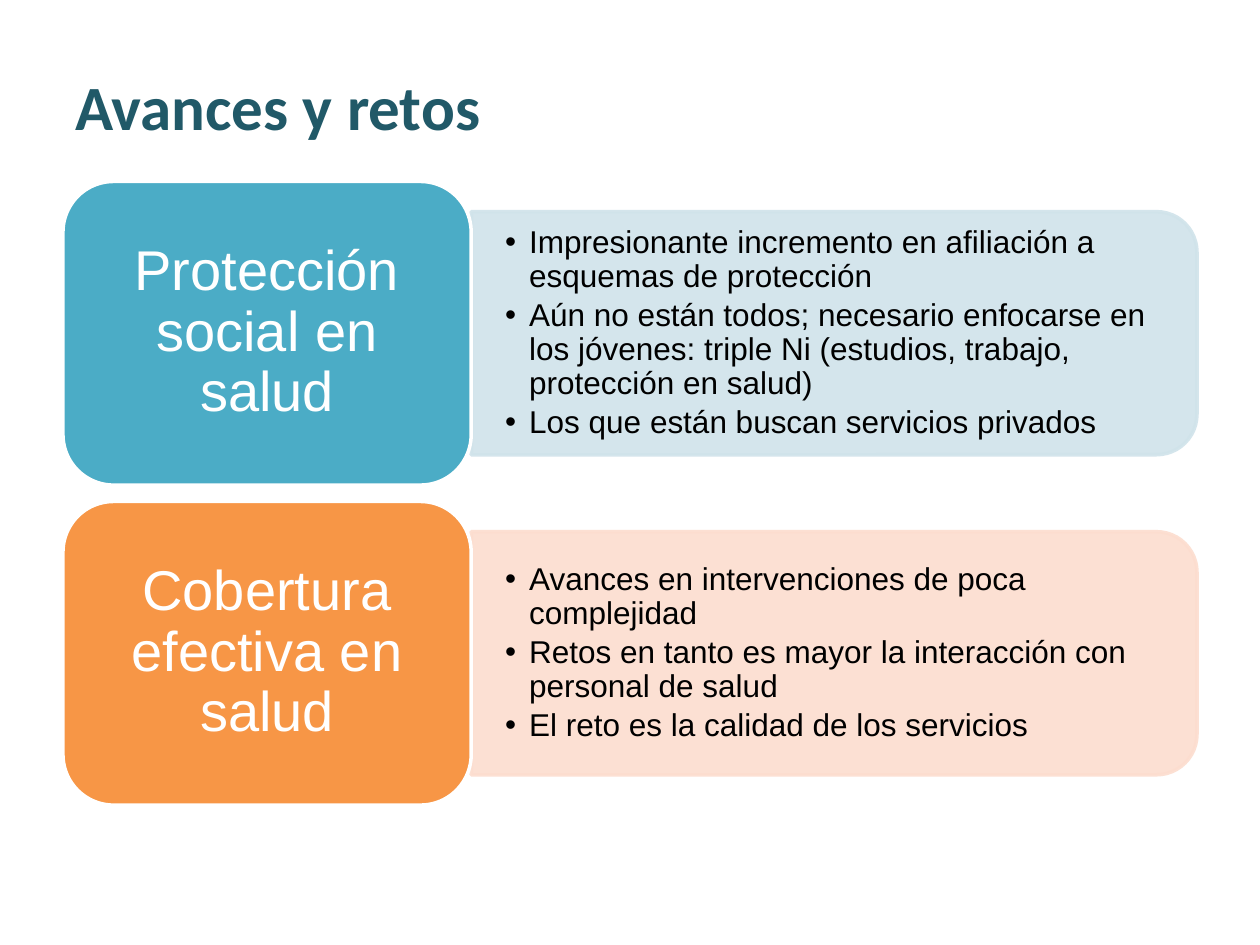
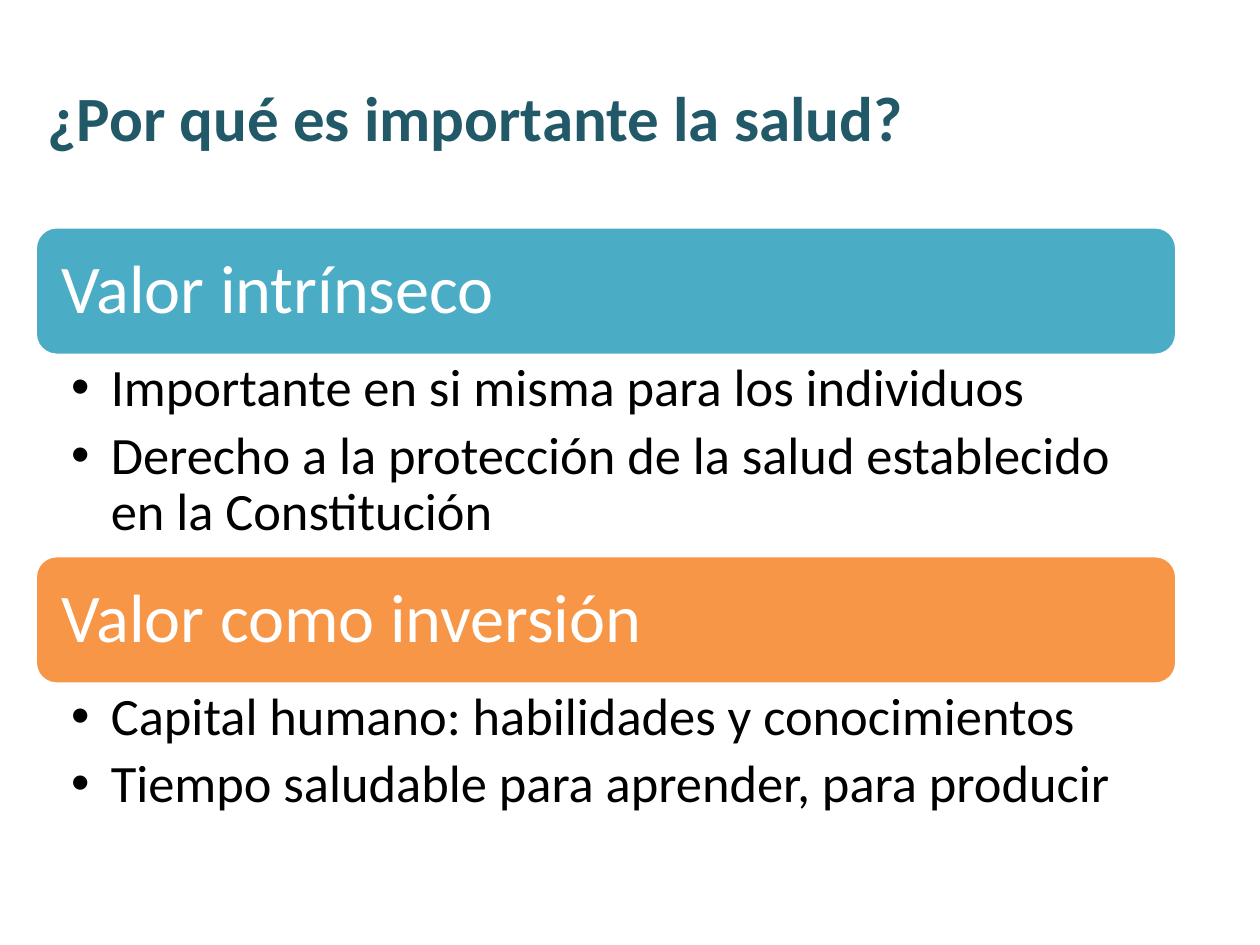
"""Build two slides on health: progress and challenges, and why health matters."""
import pptx
import pptx.dml.color
import pptx.enum.shapes
import pptx.enum.text
import pptx.oxml.ns
import pptx.util
from lxml import etree

Inches = pptx.util.Inches
Pt = pptx.util.Pt
RGBColor = pptx.dml.color.RGBColor
SHAPES = pptx.enum.shapes.MSO_SHAPE
ALIGN = pptx.enum.text.PP_ALIGN
MIDDLE = pptx.enum.text.MSO_ANCHOR.MIDDLE
TOP = pptx.enum.text.MSO_ANCHOR.TOP
qn = pptx.oxml.ns.qn

TITLE_TEAL = RGBColor(0x21, 0x59, 0x68)
TEAL = RGBColor(0x4B, 0xAC, 0xC6)
ORANGE = RGBColor(0xF7, 0x96, 0x46)
PALE_TEAL = RGBColor(0xD0, 0xE3, 0xEA)
PALE_ORANGE = RGBColor(0xFC, 0xDD, 0xCF)
WHITE = RGBColor(0xFF, 0xFF, 0xFF)
BLACK = RGBColor(0x00, 0x00, 0x00)


def write_text(box, lines, font, size, color, insets, anchor=MIDDLE, align=ALIGN.LEFT,
               bold=False, spacing=0.9, gap=0, indent=0):
    """Fill a box with paragraphs, bulleted when an indent is given."""
    frame = box.text_frame
    frame.word_wrap = True
    frame.vertical_anchor = anchor
    frame.margin_left = frame.margin_right = Inches(insets[0])
    frame.margin_top = frame.margin_bottom = Inches(insets[1])
    for number, line in enumerate(lines):
        para = frame.add_paragraph() if number else frame.paragraphs[0]
        para.text = line
        para.alignment = align
        para.line_spacing = spacing
        para.space_after = Pt(gap)
        if indent:
            properties = para._p.get_or_add_pPr()
            properties.set("marL", str(Inches(indent)))
            properties.set("indent", str(-Inches(indent)))
            etree.SubElement(properties, qn("a:buFont")).set("typeface", "Arial")
            etree.SubElement(properties, qn("a:buChar")).set("char", "•")
        para.font.name = font
        para.font.size = Pt(size)
        para.font.bold = bold
        para.font.color.rgb = color


def add_block(page, kind, left, top, width, height, fill, line):
    """Add a filled shape with a two-point outline and no shadow."""
    block = page.shapes.add_shape(kind, Inches(left), Inches(top), Inches(width), Inches(height))
    block.shadow.inherit = False
    block.fill.solid()
    block.fill.fore_color.rgb = fill
    block.line.color.rgb = line
    block.line.width = Pt(2)
    return block


deck = pptx.Presentation()
deck.slide_width = Inches(10)
deck.slide_height = Inches(7.5)

pages = []
for title, left, top in [("Avances y retos", 0.5, 0.21),
                         ("¿Por qué es importante la salud?", 0.28, 0.3)]:
    page = deck.slides.add_slide(deck.slide_layouts[6])
    box = page.shapes.add_textbox(Inches(left), Inches(top), Inches(9), Inches(1.25))
    write_text(box, [title], "Calibri", 36, TITLE_TEAL, (0.1, 0.05), bold=True, spacing=1)
    pages.append(page)
progress_page, value_page = pages

progress_rows = [
    ("Protección social en salud", TEAL, PALE_TEAL, [
        "Impresionante incremento en afiliación a esquemas de protección",
        "Aún no están todos; necesario enfocarse en los jóvenes: triple Ni "
        "(estudios, trabajo, protección en salud)",
        "Los que están buscan servicios privados"]),
    ("Cobertura efectiva en salud", ORANGE, PALE_ORANGE, [
        "Avances en intervenciones de poca complejidad",
        "Retos en tanto es mayor la interacción con personal de salud",
        "El reto es la calidad de los servicios"]),
]
label_left, label_width, label_height = 0.5, 3.24, 2.41
panel_left = label_left + label_width
panel_length, panel_height, bullets_height = 5.76, 1.93, 1.74
for row, (label, color, pale, bullets) in enumerate(progress_rows):
    top = 1.44 + row * 2.54
    middle = top + label_height / 2
    panel = add_block(progress_page, SHAPES.ROUND_2_SAME_RECTANGLE,
                      panel_left + (panel_length - panel_height) / 2, middle - panel_length / 2,
                      panel_height, panel_length, pale, pale)
    panel.rotation = 90
    for color_element in panel._element.spPr.iter(qn("a:srgbClr")):
        etree.SubElement(color_element, qn("a:alpha")).set("val", "90000")
    box = progress_page.shapes.add_textbox(Inches(panel_left), Inches(middle - bullets_height / 2),
                                           Inches(5.67), Inches(bullets_height))
    write_text(box, bullets, "Arial", 18, BLACK, (0.27, 0.14), gap=2.7, indent=0.19)
    block = add_block(progress_page, SHAPES.ROUNDED_RECTANGLE, label_left, top,
                      label_width, label_height, color, WHITE)
    write_text(block, [label], "Arial", 32, WHITE, (0.13, 0.07), align=ALIGN.CENTER)

value_sections = [
    ("Valor intrínseco", TEAL, 1.59, [
        "Importante en si misma para los individuos",
        "Derecho a la protección de la salud establecido en la Constitución"]),
    ("Valor como inversión", ORANGE, 1.13, [
        "Capital humano: habilidades y conocimientos",
        "Tiempo saludable para aprender, para producir"]),
]
band_left, band_width, band_height = 0.28, 9.06, 1.02
top = 1.8
for heading, color, bullets_height, bullets in value_sections:
    band = add_block(value_page, SHAPES.ROUNDED_RECTANGLE, band_left, top,
                     band_width, band_height, color, WHITE)
    write_text(band, [heading], "Calibri", 39, WHITE, (0.16, 0.16))
    top += band_height
    box = value_page.shapes.add_textbox(Inches(band_left), Inches(top),
                                        Inches(band_width), Inches(bullets_height))
    write_text(box, bullets, "Calibri", 30, BLACK, (0.29, 0.05), anchor=TOP, gap=6, indent=0.31)
    top += bullets_height

deck.save("out.pptx")
